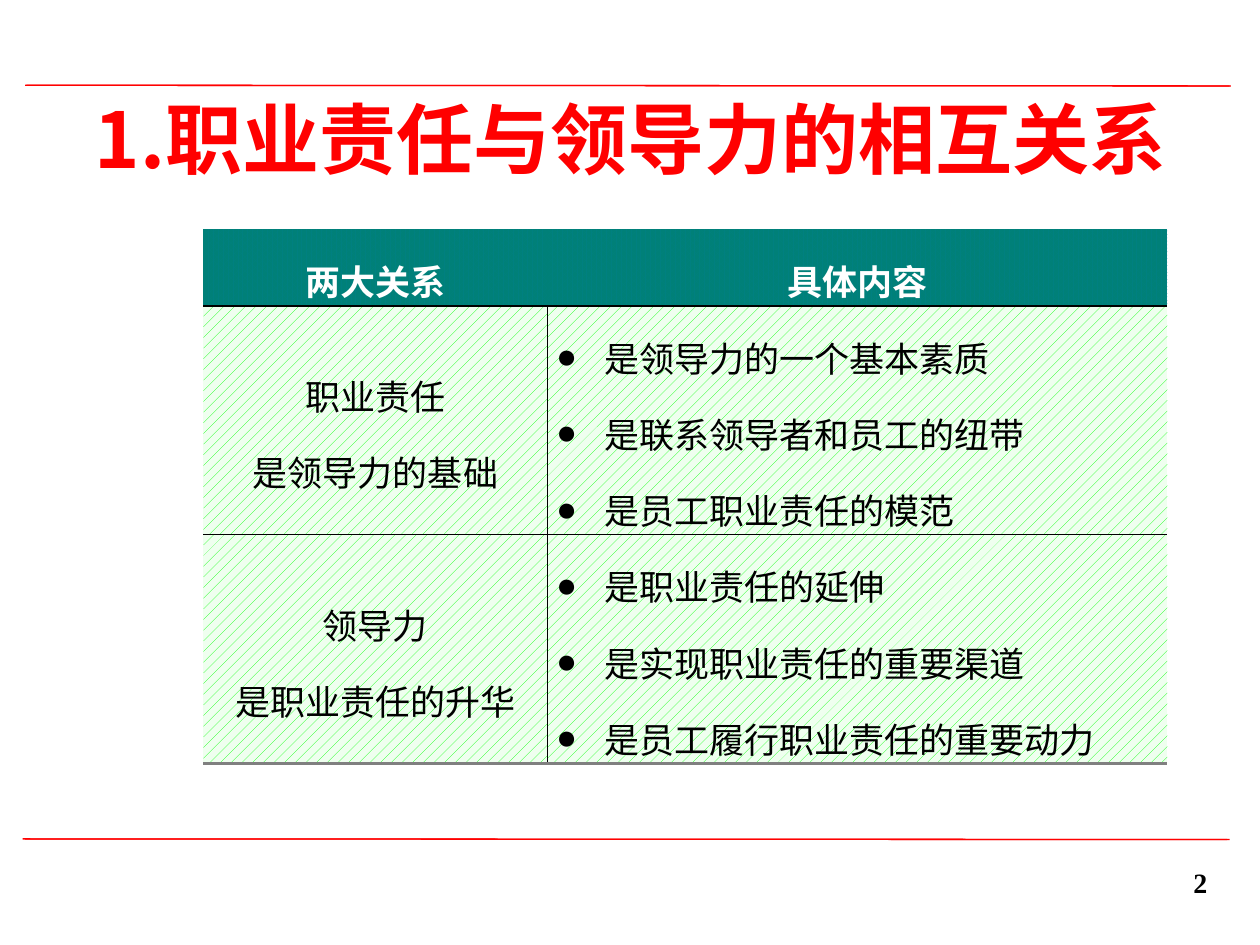
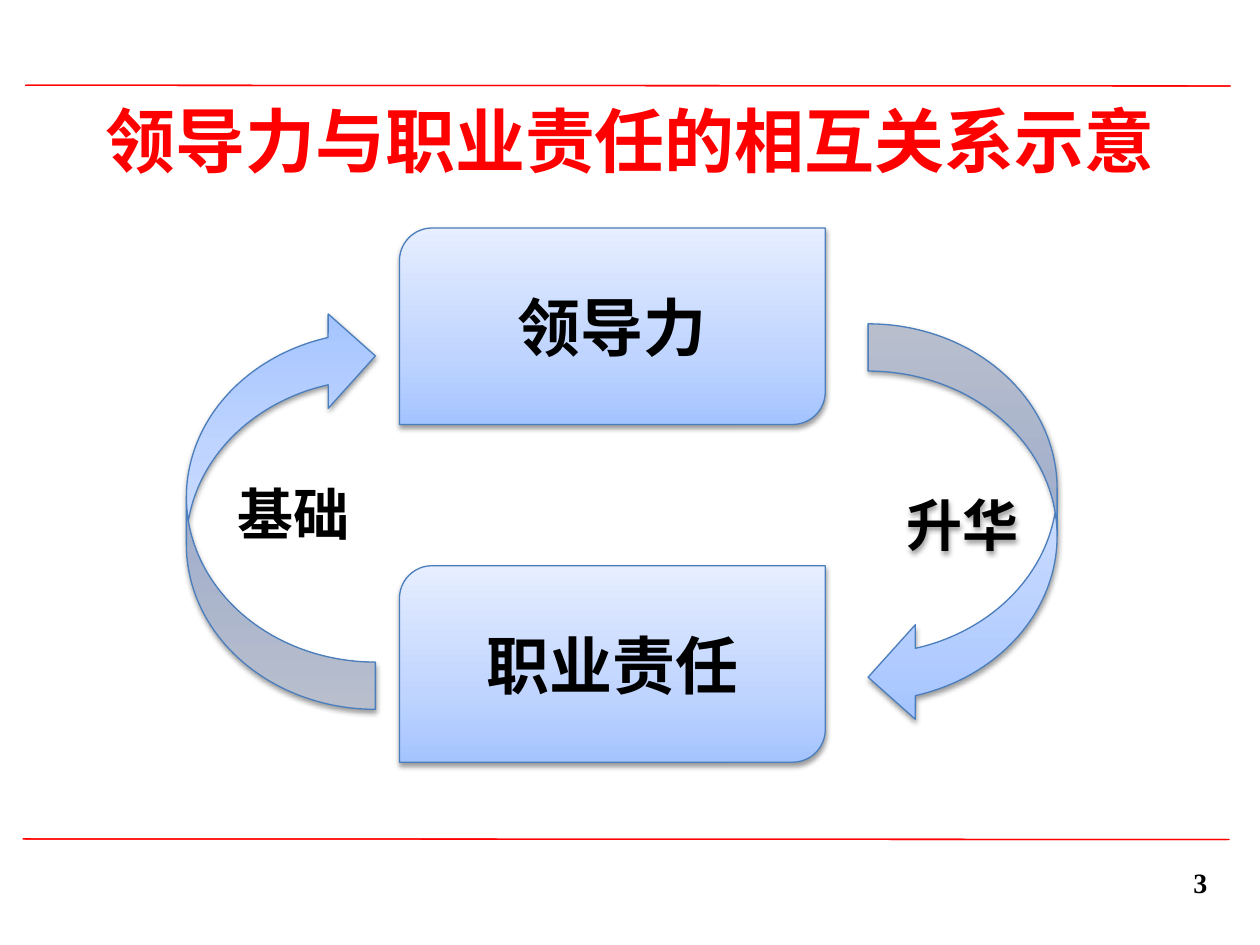
"""Two slides on how professional duty and leadership relate."""
from collections import namedtuple

from lxml import etree
from pptx import Presentation
from pptx import util as u
from pptx.dml import color
from pptx.enum import dml, shapes, text
from pptx.oxml import ns, parse_xml

COLORS = {
    "accent": "FF0000", "ink": "000000", "paper": "FFFFFF", "grey": "808080",
    "teal": "008080", "teal_back": "008078", "mint": "00FF00", "mint_back": "EFFFEF",
    "outline": "4B7EBC", "sky": "A4C4FF", "sky_mid": "BFD4FF", "sky_light": "E6EEFF",
}
FONT, NUMBER_FONT = "Noto Sans CJK SC", "Times New Roman"
COLUMNS, ROWS = 100, 75
SLIDE_WIDTH, SLIDE_HEIGHT = u.Inches(10), u.Inches(7.5)
NO_TABLE_STYLE = "{2D5ABB26-0587-4C30-8999-92F81FD0307C}"
FIRST_NUMBER = 2

Box = namedtuple("Box", "left top width height")
TITLE_BOX = Box(5.1, 6.8, 90, 12.5)
LONG_TITLE_BOX = Box(2.4, 7.2, 95.2, 7.7)
NUMBER_BOX = Box(76, 68.2, 20.8, 5)
TABLE_BOX = Box(16.15, 18.2, 76.5, 42.4)
CYCLE_BOX = Box(14.8, 18.1, 69.1, 42.4)
RULES = [(1.8, 66.58), (2, 6.77), (2, 66.58), (2.1, 6.77)]
RULE_WIDTH, RULE_DROP = 95.6, 0.05

HEADERS = ["两大关系", "具体内容"]
COLUMN_WIDTHS = [27.3, 49.2]
ROW_HEIGHTS = [6.08, 18.16, 18.16]
RELATIONS = [
    (["职业责任", "是领导力的基础"],
     ["是领导力的一个基本素质", "是联系领导者和员工的纽带", "是员工职业责任的模范"]),
    (["领导力", "是职业责任的升华"],
     ["是职业责任的延伸", "是实现职业责任的重要渠道", "是员工履行职业责任的重要动力"]),
]


def rgb(name):
    """Return a named colour."""
    return color.RGBColor.from_string(COLORS[name])


def across(columns):
    """Turn grid columns into a length."""
    return u.Emu(int(SLIDE_WIDTH * columns / COLUMNS))


def down(rows):
    """Turn grid rows into a length."""
    return u.Emu(int(SLIDE_HEIGHT * rows / ROWS))


def frame(box):
    """Turn a grid box into slide lengths."""
    return across(box.left), down(box.top), across(box.width), down(box.height)


def inside(box, left, top, width, height):
    """Return a box offset from the corner of another."""
    return Box(box.left + left, box.top + top, width, height)


def apply(target, **values):
    """Set attributes from format values."""
    for name, value in values.items():
        setattr(target, name, value)


def style_font(font, size, ink="ink", bold=True, face=FONT):
    """Format a font, including its East Asian face."""
    apply(font, size=u.Pt(size), bold=bold, name=face)
    font.color.rgb = rgb(ink)
    east = etree.Element(ns.qn("a:ea"), typeface=face)
    font._element.find(ns.qn("a:latin")).addnext(east)


def write(holder, words, size, ink="ink", align=text.PP_ALIGN.CENTER,
          anchor=text.MSO_ANCHOR.MIDDLE):
    """Write one bold paragraph into a text frame."""
    apply(holder, word_wrap=True, vertical_anchor=anchor)
    para = holder.paragraphs[0]
    para.alignment = align
    span = para.add_run()
    span.text = words
    style_font(span.font, size, ink)


def add_rule(page, left, top):
    """Draw one thin line across the page."""
    rule = page.shapes.add_connector(
        shapes.MSO_CONNECTOR.STRAIGHT, across(left), down(top),
        across(left + RULE_WIDTH), down(top + RULE_DROP))
    rule.line.color.rgb = rgb("accent")
    rule.line.width = u.Pt(0.75)
    etree.SubElement(rule._element.spPr, ns.qn("a:effectLst"))


def add_page_number(page, box, number):
    """Place the slide number field."""
    holder = page.shapes.add_textbox(*frame(box)).text_frame
    holder.word_wrap = True
    para = holder.paragraphs[0]
    para.alignment = text.PP_ALIGN.RIGHT
    span = para.add_run()
    span.text = str(number)
    style_font(span.font, 16, face=NUMBER_FONT)
    span._r.tag = ns.qn("a:fld")
    span._r.set("id", "{B6F15528-21DE-4FAA-801E-634DDDAF4B2B}")
    span._r.set("type", "slidenum")


def start_page(deck, title, box, size, anchor):
    """Add a slide with its title, rules and number."""
    page = deck.slides.add_slide(deck.slide_layouts[5])
    for left, top in RULES:
        add_rule(page, left, top)
    add_page_number(page, NUMBER_BOX, FIRST_NUMBER + len(deck.slides) - 1)
    heading = page.shapes.title
    apply(heading, **dict(zip(Box._fields, frame(box))))
    heading.text_frame.auto_size = text.MSO_AUTO_SIZE.NONE
    write(heading.text_frame, title, size, "accent", anchor=anchor)
    return page


def add_borders(cell, **borders):
    """Draw the named cell sides as (colour, points)."""
    for side in "LRTB":
        if side in borders:
            name, points = borders[side]
            cell._tc.get_or_add_tcPr().append(parse_xml(
                f'<a:ln{side} {ns.nsdecls("a")} w="{u.Pt(points)}"><a:solidFill>'
                f'<a:srgbClr val="{COLORS[name]}"/></a:solidFill></a:ln{side}>'))


def fill_cell(cell, lines, header=False, bullets=False):
    """Write the lines of a cell over its patterned fill."""
    apply(cell, margin_left=u.Inches(0.07), margin_right=u.Inches(0.07),
          margin_top=0, margin_bottom=0, vertical_anchor=text.MSO_ANCHOR.MIDDLE)
    cell.fill.patterned()
    cell.fill.pattern = dml.MSO_PATTERN.PERCENT_75 if header else dml.MSO_PATTERN.PERCENT_20
    shade = "teal" if header else "mint"
    cell.fill.fore_color.rgb = rgb(shade)
    cell.fill.back_color.rgb = rgb(shade + "_back")
    holder = cell.text_frame
    for index, line in enumerate(lines):
        para = holder.add_paragraph() if index else holder.paragraphs[0]
        para.line_spacing = 1.5
        para.alignment = text.PP_ALIGN.LEFT if bullets else text.PP_ALIGN.CENTER
        if bullets:
            props = para._p.get_or_add_pPr()
            props.set("marL", str(u.Inches(0.38)))
            props.set("indent", str(-u.Inches(0.38)))
            etree.SubElement(props, ns.qn("a:buFont"), typeface=NUMBER_FONT)
            etree.SubElement(props, ns.qn("a:buChar"), char="●")
        span = para.add_run()
        span.text = line
        style_font(span.font, 20, "paper" if header else "ink", bold=header)


def add_relation_table(page, box):
    """Build the table of the two relations."""
    table = page.shapes.add_table(len(RELATIONS) + 1, 2, *frame(box)).table
    apply(table, first_row=False, horz_banding=False)
    table._tbl.tblPr.find(ns.qn("a:tableStyleId")).text = NO_TABLE_STYLE
    for column, width in zip(table.columns, COLUMN_WIDTHS):
        column.width = across(width)
    for row, height in zip(table.rows, ROW_HEIGHTS):
        row.height = down(height)
    thin = ("ink", 1)
    for column, header in enumerate(HEADERS):
        cell = table.cell(0, column)
        add_borders(cell, B=thin)
        fill_cell(cell, [header], header=True)
    for row, relation in enumerate(RELATIONS, 1):
        bottom = ("grey", 1.5) if row == len(RELATIONS) else thin
        for column, lines in enumerate(relation):
            cell = table.cell(row, column)
            add_borders(cell, T=thin, B=bottom, **{"RL"[column]: thin})
            fill_cell(cell, lines, bullets=column == 1)


def add_glossy(page, kind, box, words="", size=36):
    """Add a blue gradient shape with a soft shadow."""
    shape = page.shapes.add_shape(kind, *frame(box))
    shape.shadow.inherit = False
    props = shape._element.spPr
    stops = "".join(
        f'<a:gs pos="{share * 1000}"><a:srgbClr val="{COLORS[name]}"/></a:gs>'
        for share, name in ((0, "sky"), (35, "sky_mid"), (100, "sky_light")))
    props.find(ns.qn("a:prstGeom")).addnext(parse_xml(
        f'<a:gradFill {ns.nsdecls("a")} rotWithShape="1"><a:gsLst>{stops}</a:gsLst>'
        '<a:lin ang="16200000" scaled="1"/></a:gradFill>'))
    shape.line.color.rgb = rgb("outline")
    shape.line.width = u.Pt(0.75)
    props.find(ns.qn("a:effectLst")).append(parse_xml(
        f'<a:outerShdw {ns.nsdecls("a")} blurRad="{u.Pt(3.1)}" dist="{u.Pt(1.6)}" '
        f'dir="5400000" rotWithShape="0"><a:srgbClr val="{COLORS["ink"]}">'
        '<a:alpha val="38000"/></a:srgbClr></a:outerShdw>'))
    if words:
        write(shape.text_frame, words, size)
    return shape


def add_cycle(page, box):
    """Draw the two ideas and the arrows that link them."""
    for top, words in ((0, "领导力"), (26.8, "职业责任")):
        add_glossy(page, shapes.MSO_SHAPE.ROUND_2_DIAG_RECTANGLE,
                   inside(box, 16.9, top, 33.8, 15.6), words)
    arrow = shapes.MSO_SHAPE.CURVED_LEFT_ARROW
    add_glossy(page, arrow, inside(box, 54.1, 7.6, 15, 31.8), "升华", 32)
    rising = add_glossy(page, arrow, inside(box, 0, 6.4, 15, 31.8))
    for flip in ("flipH", "flipV"):
        rising._element.spPr.xfrm.set(flip, "1")
    label = page.shapes.add_textbox(*frame(inside(box, 3.1, 19.5, 16.5, 6.4)))
    write(label.text_frame, "基础", 32, align=text.PP_ALIGN.LEFT,
          anchor=text.MSO_ANCHOR.TOP)


def main():
    """Build and save the deck."""
    deck = Presentation()
    apply(deck, slide_width=SLIDE_WIDTH, slide_height=SLIDE_HEIGHT)
    deck.element.set("firstSlideNum", str(FIRST_NUMBER))
    page = start_page(deck, "1.职业责任与领导力的相互关系", TITLE_BOX, 44,
                      text.MSO_ANCHOR.TOP)
    add_relation_table(page, TABLE_BOX)
    page = start_page(deck, "领导力与职业责任的相互关系示意", LONG_TITLE_BOX, 40,
                      text.MSO_ANCHOR.MIDDLE)
    add_cycle(page, CYCLE_BOX)
    deck.save("out.pptx")


if __name__ == "__main__":
    main()
